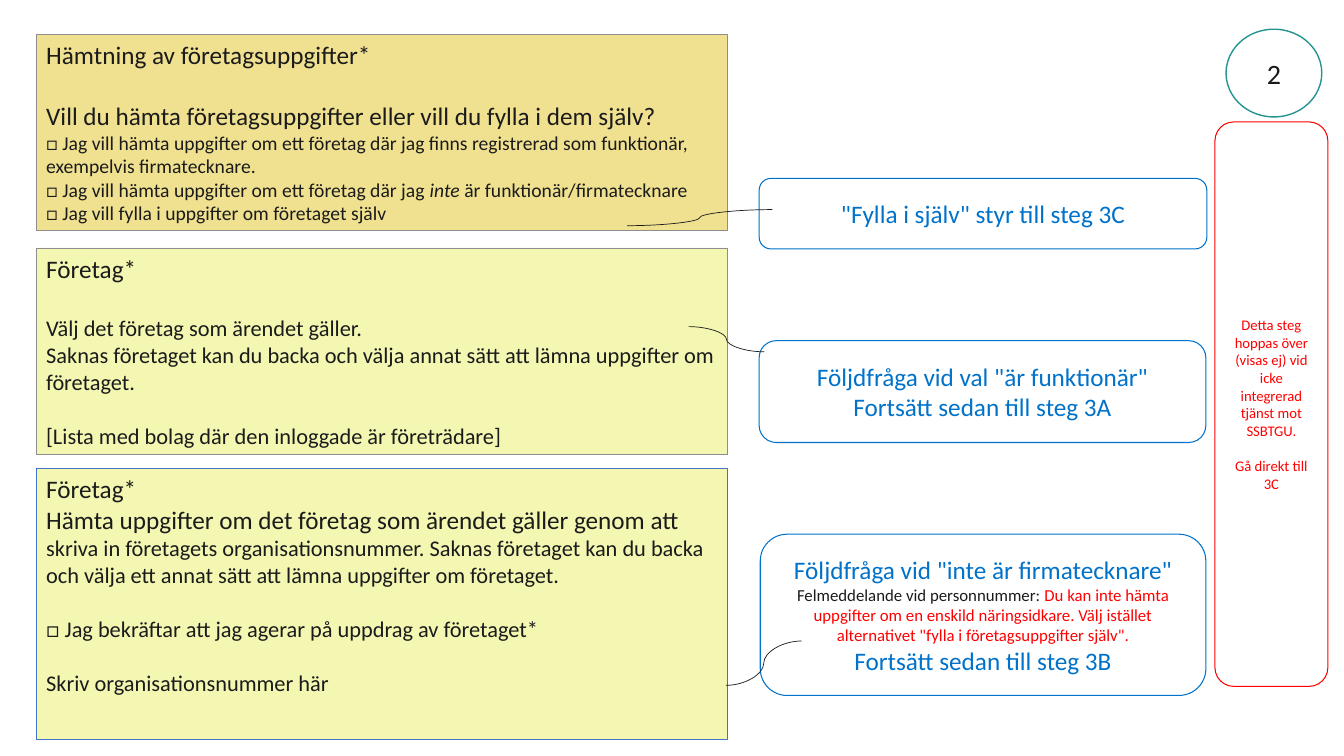
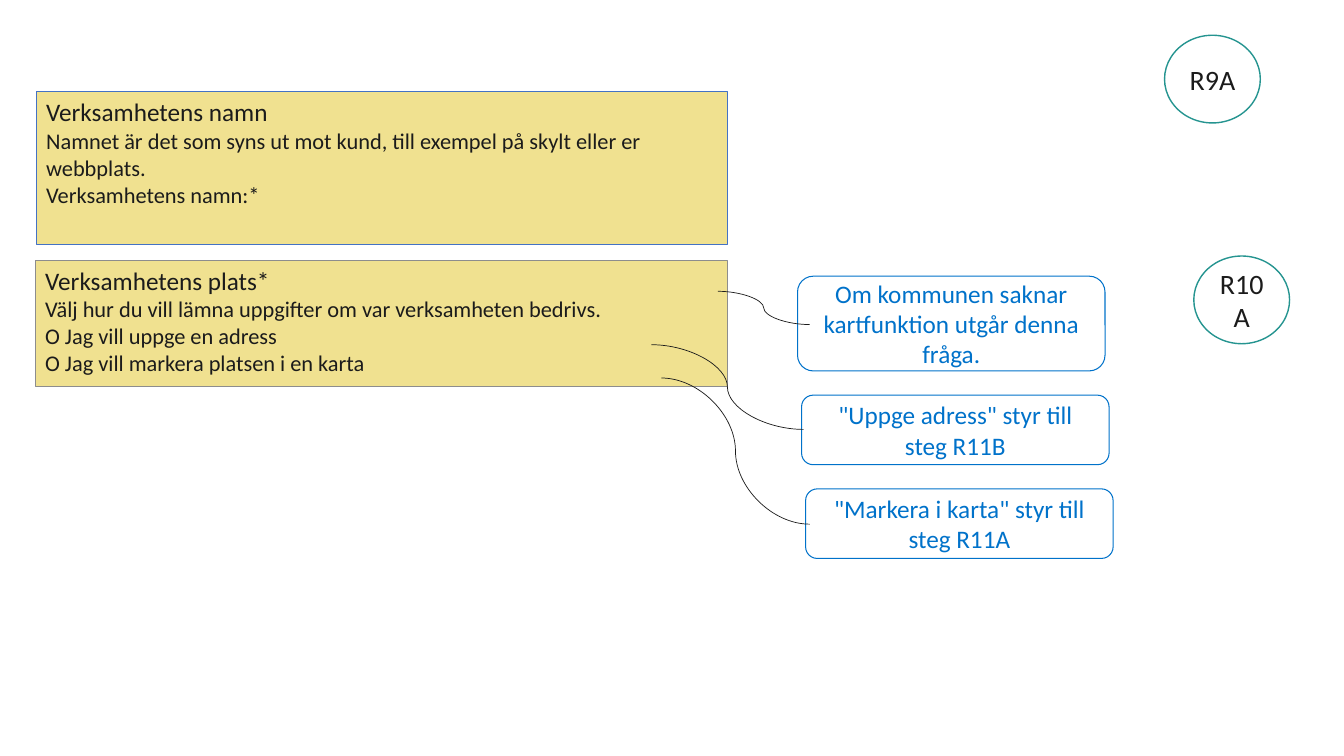
from lxml import etree
from pptx import Presentation
from pptx.dml.color import RGBColor
from pptx.enum.shapes import MSO_CONNECTOR, MSO_SHAPE as SHAPE
from pptx.enum.text import MSO_ANCHOR as ANCHOR, PP_ALIGN as ALIGN
from pptx.oxml.ns import qn
from pptx.util import Inches, Pt

FONT = "Calibri"
INK = RGBColor(0x1B, 0x1B, 0x1B)
WHITE = RGBColor(0xFF, 0xFF, 0xFF)
SAND = RGBColor(0xF0, 0xE1, 0x90)
LEMON = RGBColor(0xF4, 0xF7, 0xB2)
GREY = RGBColor(0x8D, 0x8D, 0x8D)
STEEL = RGBColor(0x44, 0x72, 0xC4)
BLUE = RGBColor(0x00, 0x72, 0xCA)
TEAL = RGBColor(0x25, 0x94, 0x90)
RED = RGBColor(0xFF, 0x00, 0x00)

# Box styles: shape, fill, outline, outline width, text colour, centred
STYLES = {
    "question": (SHAPE.RECTANGLE, SAND, GREY, 0.5, INK, False),
    "name": (SHAPE.RECTANGLE, SAND, STEEL, 0.5, INK, False),
    "company": (SHAPE.RECTANGLE, LEMON, GREY, 0.5, INK, False),
    "lookup": (SHAPE.RECTANGLE, LEMON, STEEL, 0.5, INK, False),
    "note": (SHAPE.ROUNDED_RECTANGLE, None, BLUE, 0.75, BLUE, True),
    "warning": (SHAPE.ROUNDED_RECTANGLE, None, RED, 0.75, RED, True),
    "step": (SHAPE.OVAL, WHITE, TEAL, 1, INK, True),
}

# Each box: style, (left, top, width, height), paragraphs
# Each paragraph: size, space before, spans of text with optional overrides
PAGES = [
    {
        "boxes": [
            ("question", (0.36, 0.34, 6.85, 1.95), [
                (18, 0, [("Hämtning av företagsuppgifter*", {})]),
                (18, 22, [("Vill du hämta företagsuppgifter eller vill du fylla i dem själv?", {})]),
                (14, 0, [("□ Jag vill hämta uppgifter om ett företag där jag finns registrerad "
                          "som funktionär, exempelvis firmatecknare.", {})]),
                (14, 0, [("□ Jag vill hämta uppgifter om ett företag där jag ", {}),
                         ("inte", {"italic": True}),
                         (" är funktionär/firmatecknare", {})]),
                (14, 0, [("□ Jag vill fylla i uppgifter om företaget själv", {})]),
            ]),
            ("step", (12.16, 0.29, 0.95, 0.87), [(20, 0, [("2", {})])]),
            ("note", (7.53, 1.77, 4.44, 0.7), [
                (18, 0, [('"Fylla i själv" styr till steg 3C', {})]),
            ]),
            ("company", (0.36, 2.46, 6.86, 2.05), [
                (18, 0, [("Företag*", {})]),
                (16, 22, [("Välj det företag som ärendet gäller.", {})]),
                (16, 0, [("Saknas företaget kan du backa och välja annat sätt att lämna "
                          "uppgifter om företaget.", {})]),
                (16, 19.5, [("[Lista med bolag där den inloggade är företrädare]", {})]),
            ]),
            ("lookup", (0.36, 4.65, 6.86, 2.69), [
                (18, 0, [("Företag*", {})]),
                (16, 0, [("Hämta uppgifter om det företag som ärendet gäller genom att ", {"size": 18}),
                         ("skriva in företagets organisationsnummer. Saknas företaget kan du "
                          "backa och välja ett annat sätt att lämna uppgifter om företaget.", {})]),
                (16, 19.5, [("□ Jag bekräftar att jag agerar på uppdrag av företaget*", {})]),
                (16, 19.5, [("Skriv organisationsnummer här", {})]),
            ]),
            ("note", (7.53, 3.38, 4.43, 1.01), [
                (18, 0, [('Följdfråga vid val "är funktionär"', {})]),
                (18, 0, [("Fortsätt sedan till steg 3A", {})]),
            ]),
            ("note", (7.54, 5.3, 4.42, 1.6), [
                (18, 0, [('Följdfråga vid "inte är firmatecknare"', {})]),
                (12, 0, [("Felmeddelande vid personnummer: ", {"color": INK}),
                         ("Du kan inte hämta uppgifter om en enskild näringsidkare. Välj "
                          'istället alternativet "fylla i företagsuppgifter själv".',
                          {"color": RED})]),
                (18, 0, [("Fortsätt sedan till steg 3B", {})]),
            ]),
            ("warning", (12.05, 1.21, 1.12, 5.6), [
                (10.5, 0, [("Detta steg hoppas över (visas ej) vid icke integrerad tjänst "
                            "mot SSBTGU.", {})]),
                (10.5, 12.8, [("Gå direkt till 3C", {})]),
            ]),
        ],
        "curves": [
            (6.83, 3.24, 7.58, 3.49),
            (6.22, 2.24, 7.66, 2.08),
            (7.2, 6.8, 7.95, 6.36),
        ],
    },
    {
        "boxes": [
            ("name", (0.36, 0.91, 6.86, 1.51), [
                (18, 0, [("Verksamhetens namn", {})]),
                (16, 0, [("Namnet är det som syns ut mot kund, till exempel på skylt "
                          "eller er webbplats.", {})]),
                (16, 0, [("Verksamhetens namn:*", {})]),
            ]),
            ("note", (7.91, 2.74, 3.05, 0.94), [
                (18, 0, [("Om kommunen saknar kartfunktion utgår denna fråga.", {})]),
            ]),
            ("step", (11.55, 0.35, 0.95, 0.87), [(20, 0, [("R9A", {})])]),
            ("question", (0.35, 2.58, 6.86, 1.25), [
                (18, 0, [("Verksamhetens plats*", {})]),
                (16, 0, [("Välj hur du vill lämna uppgifter om var verksamheten bedrivs.", {})]),
                (16, 0, [("O Jag vill uppge en adress", {})]),
                (16, 0, [("O Jag vill markera platsen i en karta", {})]),
            ]),
            ("note", (7.95, 3.92, 3.05, 0.69), [
                (18, 0, [('"Uppge adress" styr till steg R11B', {})]),
            ]),
            ("note", (7.99, 4.85, 3.05, 0.69), [
                (18, 0, [('"Markera i karta" styr till steg R11A', {})]),
            ]),
            ("step", (11.84, 2.54, 0.95, 0.87), [(20, 0, [("R10A", {})])]),
        ],
        "curves": [
            (6.46, 3.42, 7.97, 4.26),
            (6.56, 3.75, 8.03, 5.2),
            (7.12, 2.89, 8.03, 3.22),
        ],
    },
]


def add_box(page, style, place, paragraphs):
    preset, fill, outline, width, ink, centred = STYLES[style]
    box = page.shapes.add_shape(preset, *map(Inches, place))
    box.shadow.inherit = False
    if fill is None:
        box.fill.background()
    else:
        box.fill.solid()
        box.fill.fore_color.rgb = fill
    box.line.color.rgb = outline
    box.line.width = Pt(width)

    frame = box.text_frame
    frame.word_wrap = True
    frame.vertical_anchor = ANCHOR.MIDDLE if centred else ANCHOR.TOP
    for index, (size, gap, spans) in enumerate(paragraphs):
        para = frame.add_paragraph() if index else frame.paragraphs[0]
        para.alignment = ALIGN.CENTER if centred else ALIGN.LEFT
        if gap:
            para.space_before = Pt(gap)
        for text, changes in spans:
            span = para.add_run()
            span.text = text
            span.font.name = FONT
            span.font.size = Pt(changes.get("size", size))
            span.font.color.rgb = changes.get("color", ink)
            if changes.get("italic"):
                span.font.italic = True


def add_curve(page, ends):
    curve = page.shapes.add_connector(MSO_CONNECTOR.CURVE, *map(Inches, ends))
    curve.line.color.rgb = INK
    curve.line.width = Pt(0.5)
    etree.SubElement(curve._element.spPr, qn("a:effectLst"))


def main():
    deck = Presentation()
    deck.slide_width, deck.slide_height = Inches(13.33), Inches(7.5)
    for content in PAGES:
        page = deck.slides.add_slide(deck.slide_layouts[6])
        for box in content["boxes"]:
            add_box(page, *box)
        for ends in content["curves"]:
            add_curve(page, ends)
    deck.save("out.pptx")


if __name__ == "__main__":
    main()
